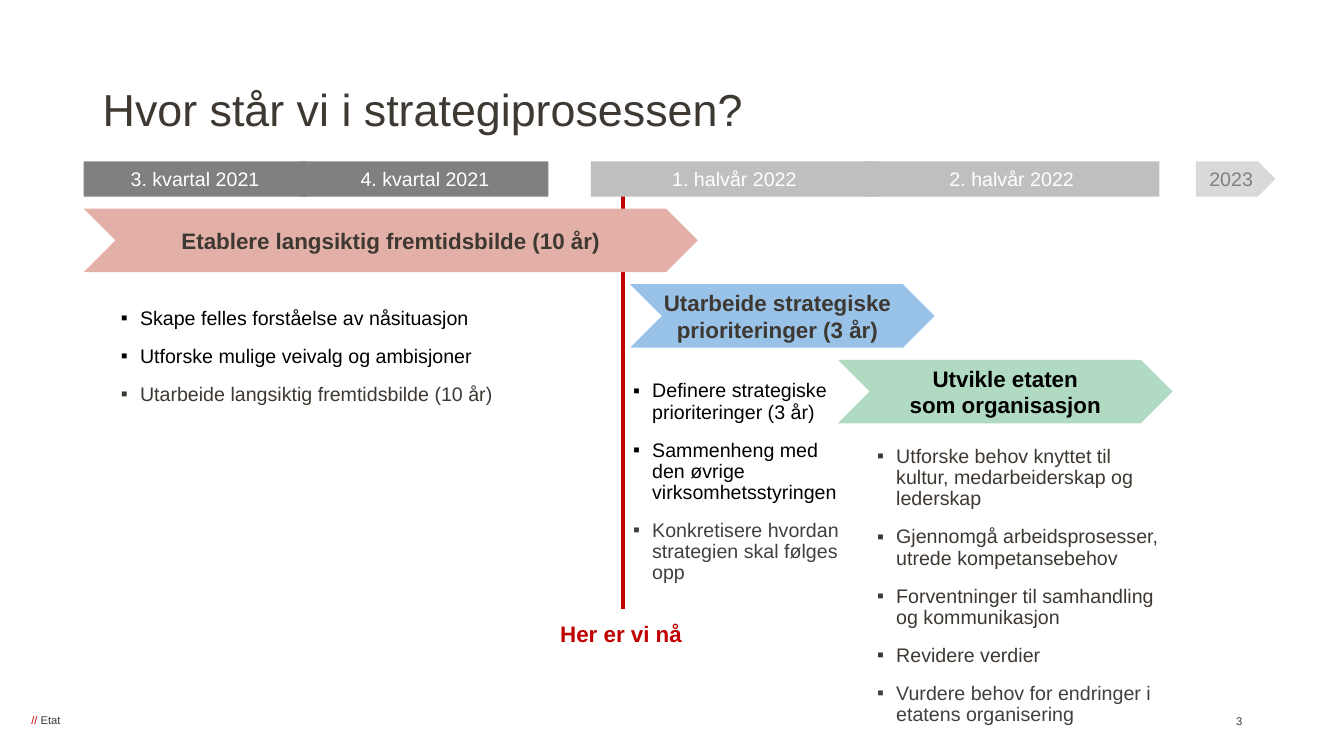
from dataclasses import dataclass

from lxml import etree
from pptx import Presentation
from pptx import util as u
from pptx.dml.color import RGBColor
from pptx.enum import shapes, text
from pptx.oxml import ns

SHAPE = shapes.MSO_SHAPE
ALIGN = text.PP_ALIGN
ANCHOR = text.MSO_ANCHOR


@dataclass(frozen=True)
class Theme:
    """Font, colours and type sizes of the deck."""
    font: str = "Arial"
    ink: str = "3E3832"
    black: str = "000000"
    soft: str = "404040"
    white: str = "FFFFFF"
    red: str = "C30000"
    marker: str = "C00000"
    dark_grey: str = "808080"
    mid_grey: str = "BFBFBF"
    light_grey: str = "D9D9D9"
    rose: str = "E3B0A8"
    blue: str = "99C2E8"
    green: str = "9BD0B0"
    title: int = 32
    heading: int = 16
    body: int = 14
    small: int = 8


class Timeline:
    """Draws the elements of the strategy timeline on one page."""

    def __init__(self, page, theme):
        """Keep the page and the theme."""
        self.page = page
        self.theme = theme

    def span(self, para, words, size, color, bold=False):
        """Add one formatted run to a paragraph."""
        font = para.add_run()
        font.text = words
        font = font.font
        values = {"name": self.theme.font, "size": u.Pt(size), "bold": bold}
        for name, value in values.items():
            setattr(font, name, value)
        font.color.rgb = RGBColor.from_string(color)

    def frame(self, shape, insets=(0.1, 0.05, 0.1, 0.05), wrap=True, anchor=ANCHOR.MIDDLE):
        """Set the insets, wrapping and anchor of a shape's text."""
        frame = shape.text_frame
        sides = ("margin_left", "margin_top", "margin_right", "margin_bottom")
        values = dict(zip(sides, map(u.Inches, insets)))
        values.update(word_wrap=wrap, vertical_anchor=anchor)
        for name, value in values.items():
            setattr(frame, name, value)
        return frame

    def label(self, place, spans, size, align=ALIGN.LEFT, bold=False, spacing=1.0, **layout):
        """Add a text box with one line of coloured spans."""
        box = self.page.shapes.add_textbox(*map(u.Inches, place))
        para = self.frame(box, **layout).paragraphs[0]
        para.alignment = align
        para.line_spacing = spacing
        for words, color in spans:
            self.span(para, words, size, color, bold)

    def block(self, kind, place, lines, fill, color, size, bold=False, alpha=None, **layout):
        """Add a filled shape with centred lines of text."""
        shape = self.page.shapes.add_shape(kind, *map(u.Inches, place))
        shape.shadow.inherit = False
        shape.fill.solid()
        shape.fill.fore_color.rgb = RGBColor.from_string(fill)
        shape.line.fill.background()
        if alpha:
            tint = shape.fill._xPr.find(".//" + ns.qn("a:srgbClr"))
            etree.SubElement(tint, ns.qn("a:alpha"), val=str(alpha * 1000))
        frame = self.frame(shape, **layout)
        for index, words in enumerate(lines):
            para = frame.add_paragraph() if index else frame.paragraphs[0]
            para.alignment = ALIGN.CENTER
            self.span(para, words, size, color, bold)

    def bullets(self, place, items):
        """Add a list of square bullets, each item with its colour."""
        box = self.page.shapes.add_textbox(*map(u.Inches, place))
        frame = self.frame(box, (0.1, 0.08, 0.1, 0.05), anchor=ANCHOR.TOP)
        indent = u.Inches(0.19)
        for index, (words, color) in enumerate(items):
            para = frame.add_paragraph() if index else frame.paragraphs[0]
            values = {"line_spacing": 0.9, "space_after": u.Pt(6),
                      "space_before": u.Pt(6 if index else 0)}
            for name, value in values.items():
                setattr(para, name, value)
            props = para._p.get_or_add_pPr()
            props.set("marL", str(indent))
            props.set("indent", str(-indent))
            etree.SubElement(props, ns.qn("a:buFont"), typeface=self.theme.font)
            etree.SubElement(props, ns.qn("a:buChar"), char="▪")
            self.span(para, words, self.theme.body, color)

    def line(self, start, end, color, width):
        """Add a straight line."""
        points = map(u.Inches, (*start, *end))
        line = self.page.shapes.add_connector(shapes.MSO_CONNECTOR.STRAIGHT, *points)
        line.line.color.rgb = RGBColor.from_string(color)
        line.line.width = u.Pt(width)
        etree.SubElement(line._element.spPr, ns.qn("a:effectLst"))


def main():
    """Build the slide and save it."""
    deck = Presentation()
    deck.slide_width, deck.slide_height = u.Inches(13.33), u.Inches(7.5)
    theme = Theme()
    page = Timeline(deck.slides.add_slide(deck.slide_layouts[6]), theme)

    page.label((0.27, 7.08, 0.39, 0.13), [("// ", theme.red), ("Etat", theme.ink)], theme.small,
               insets=(0.04, 0, 0, 0), wrap=False, anchor=ANCHOR.TOP)
    page.line((6.18, 1.94), (6.18, 6.04), theme.red, 3)
    page.label((5.39, 6.1, 1.54, 0.37), [("Her er vi nå", theme.marker)], theme.heading,
               ALIGN.CENTER, True, 0.9, insets=(0.1, 0.08, 0.1, 0.05), anchor=ANCHOR.TOP)
    page.label((0.92, 0.53, 11.5, 1.17), [("Hvor står vi i strategiprosessen?", theme.ink)],
               theme.title, spacing=0.9)

    periods = [
        ("3. kvartal 2021", 0.83, 2.21, SHAPE.RECTANGLE, theme.dark_grey, theme.white),
        ("4. kvartal 2021", 2.99, 2.45, SHAPE.RECTANGLE, theme.dark_grey, theme.white),
        ("2023", 11.86, 0.79, SHAPE.PENTAGON, theme.light_grey, theme.dark_grey),
        ("1. halvår 2022", 5.86, 2.85, SHAPE.RECTANGLE, theme.mid_grey, theme.white),
        ("2. halvår 2022", 8.57, 2.93, SHAPE.RECTANGLE, theme.mid_grey, theme.white),
    ]
    for words, left, width, kind, fill, color in periods:
        page.block(kind, (left, 1.6, width, 0.35), [words], fill, color, theme.body)

    page.bullets((6.18, 3.7, 2.31, 2.85), [
        ("Definere strategiske prioriteringer (3 år)", theme.black),
        ("Sammenheng med den øvrige virksomhetsstyringen", theme.black),
        ("Konkretisere hvordan strategien skal følges opp", theme.soft),
    ])
    page.block(SHAPE.CHEVRON, (8.31, 3.57, 3.32, 0.63), ["Utvikle etaten", "som organisasjon"],
               theme.green, theme.black, theme.heading, True, 78,
               insets=(0, 0.05, 0, 0.05), wrap=False)
    page.bullets((8.6, 4.35, 3.08, 1.57), [
        ("Utforske behov knyttet til kultur, medarbeiderskap og lederskap", theme.ink),
        ("Gjennomgå arbeidsprosesser, utrede kompetansebehov", theme.ink),
        ("Forventninger til samhandling og kommunikasjon", theme.ink),
        ("Revidere verdier", theme.ink),
        ("Vurdere behov for endringer i etatens organisering", theme.soft),
    ])
    page.bullets((1.1, 2.98, 3.98, 2.21), [
        ("Skape felles forståelse av nåsituasjon", theme.black),
        ("Utforske mulige veivalg og ambisjoner", theme.black),
        ("Utarbeide langsiktig fremtidsbilde (10 år)", theme.ink),
    ])
    page.block(SHAPE.CHEVRON, (6.25, 2.82, 3.02, 0.63),
               ["Utarbeide strategiske", "prioriteringer (3 år)"],
               theme.blue, theme.ink, theme.heading, True,
               insets=(0, 0.05, 0.1, 0.05), wrap=False)
    page.block(SHAPE.CHEVRON, (0.83, 2.07, 6.09, 0.63),
               ["Etablere langsiktig fremtidsbilde (10 år)"],
               theme.rose, theme.ink, theme.heading, True)
    page.label((9.42, 6.95, 3, 0.4), [("3", theme.ink)], theme.small, ALIGN.RIGHT)

    deck.save("out.pptx")


if __name__ == "__main__":
    main()
